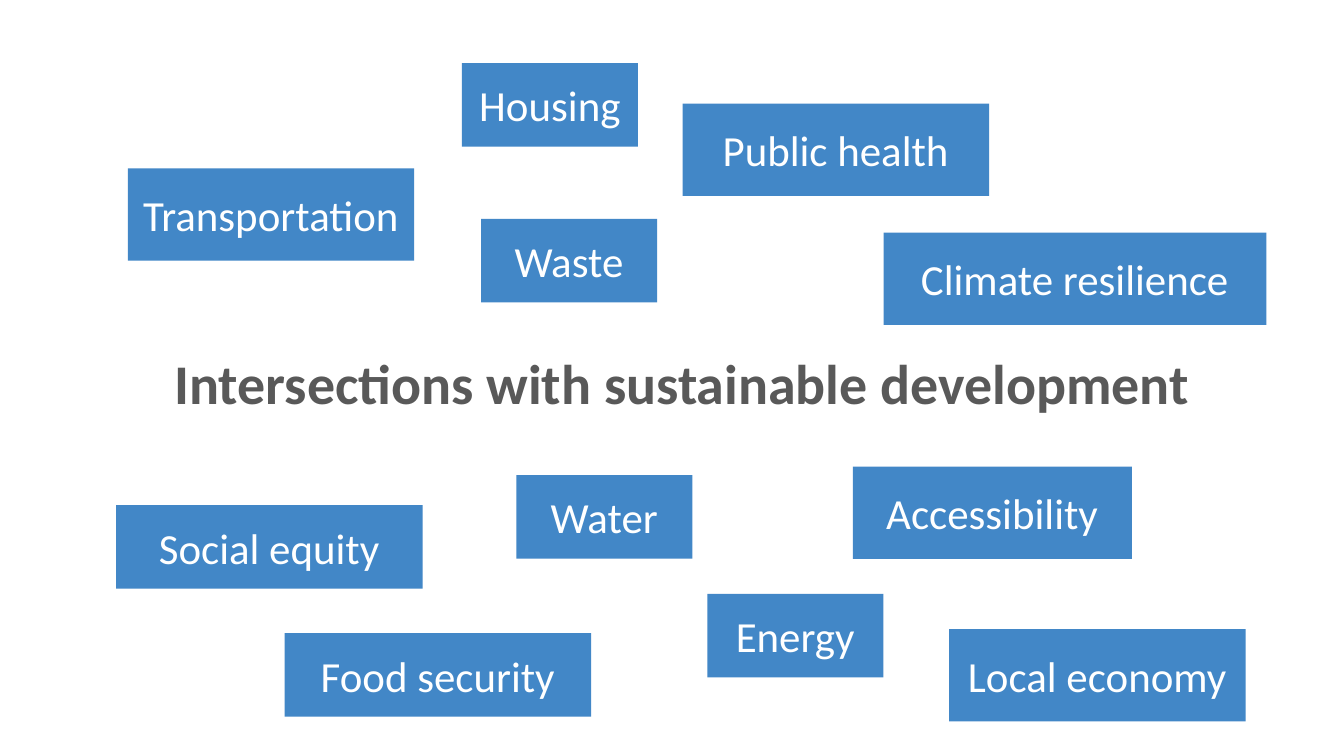
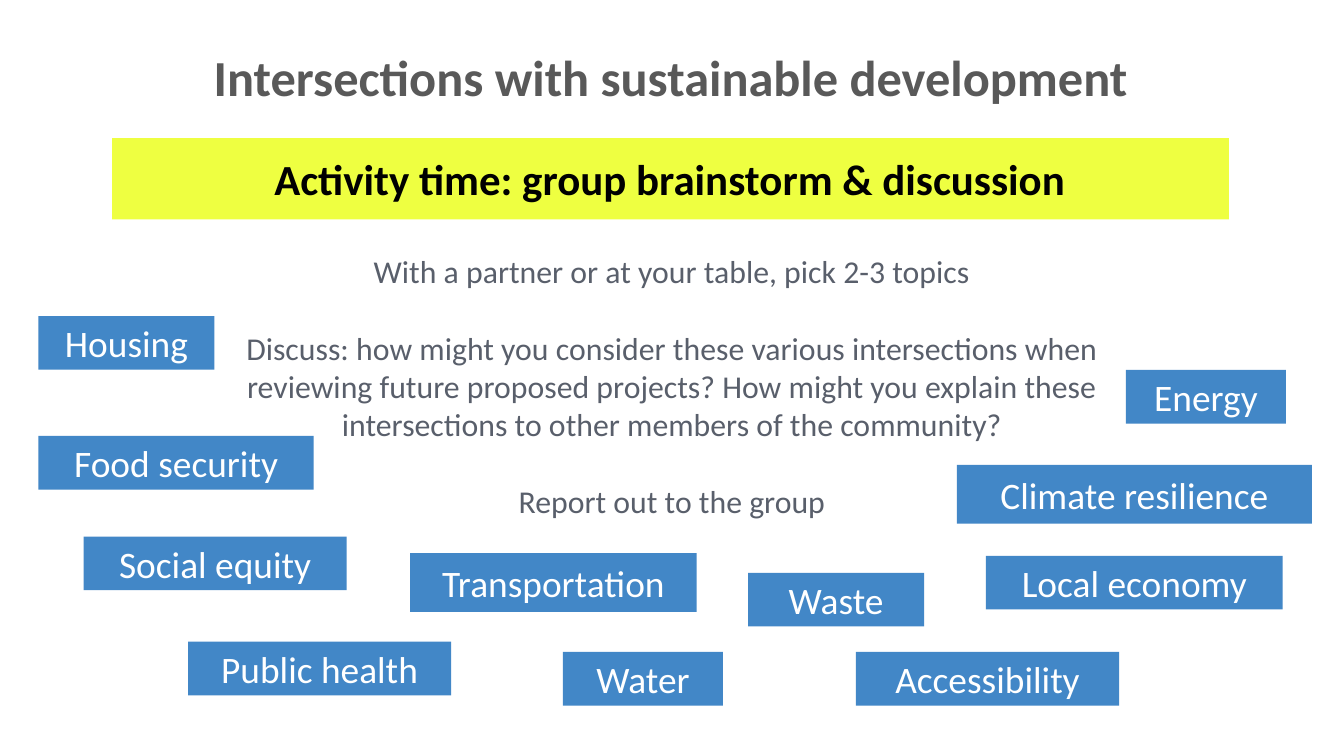
from typing import NamedTuple

from pptx import Presentation
from pptx.dml.color import RGBColor
from pptx.enum.shapes import MSO_SHAPE
from pptx.enum.text import MSO_ANCHOR, MSO_AUTO_SIZE, PP_ALIGN
from pptx.presentation import Presentation as Deck
from pptx.slide import Slide
from pptx.text.text import TextFrame
from pptx.util import Pt

FONT = "Calibri"
BLUE = RGBColor(0x42, 0x87, 0xC7)
YELLOW = RGBColor(0xEE, 0xFF, 0x41)
WHITE = RGBColor(0xFF, 0xFF, 0xFF)
BLACK = RGBColor(0x00, 0x00, 0x00)
TITLE_GREY = RGBColor(0x59, 0x59, 0x59)
BODY_GREY = RGBColor(0x59, 0x5F, 0x6B)
TITLE = "Intersections with sustainable development"
TITLE_ONLY = 5
INSET = 5.25
TITLE_INSET = 2.6
BODY_GAP = 20.75


class Area(NamedTuple):
    left: float
    top: float
    width: float
    height: float


class TextStyle(NamedTuple):
    size: float
    color: RGBColor
    bold: bool = False


class Topic(NamedTuple):
    label: str
    area: Area


NARROW, MEDIUM, WIDE = 94.3, 153.4, 164.2
LOW, TALL = 44.75, 49.5
OVERVIEW_TOPICS = [
    Topic("Housing", Area(247.5, 33.75, NARROW, LOW)),
    Topic("Transportation", Area(68.5, 90.25, MEDIUM, TALL)),
    Topic("Local economy", Area(508.4, 337, 159, TALL)),
    Topic("Social equity", Area(62.2, 270.6, WIDE, LOW)),
    Topic("Water", Area(276.6, 254.5, NARROW, LOW)),
    Topic("Energy", Area(378.9, 318.2, NARROW, LOW)),
    Topic("Waste", Area(257.7, 117.2, NARROW, LOW)),
    Topic("Climate resilience", Area(473.4, 124.6, 205, TALL)),
    Topic("Public health", Area(365.7, 55.5, WIDE, TALL)),
    Topic("Food security", Area(152.5, 339.2, WIDE, LOW)),
    Topic("Accessibility", Area(456.9, 250, 149.5, TALL)),
]

SMALL, LARGE = 85.7, 141
SLIM, THICK = 28.75, 31.5
ACTIVITY_TOPICS = [
    Topic("Housing", Area(20.6, 169.4, NARROW, SLIM)),
    Topic("Transportation", Area(219.8, 296.4, MEDIUM, THICK)),
    Topic("Local economy", Area(528.2, 297.8, 159, SLIM)),
    Topic("Social equity", Area(44.8, 287.5, LARGE, SLIM)),
    Topic("Water", Area(301.6, 349.3, SMALL, SLIM)),
    Topic("Energy", Area(603.2, 198.2, SMALL, SLIM)),
    Topic("Waste", Area(400.8, 306.9, NARROW, SLIM)),
    Topic("Climate resilience", Area(512.6, 249, 190.3, THICK)),
    Topic("Public health", Area(100.8, 343.8, LARGE, SLIM)),
    Topic("Food security", Area(20.6, 233.6, 147.5, SLIM)),
    Topic("Accessibility", Area(458.6, 349.3, LARGE, SLIM)),
]

INSTRUCTIONS = [
    "With a partner or at your table, pick 2-3 topics",
    "Discuss: how might you consider these various intersections when reviewing "
    "future proposed projects? How might you explain these intersections to other "
    "members of the community?",
    "Report out to the group",
]


def in_points(area: Area) -> list[Pt]:
    """Return the position and size of an area as lengths."""
    return [Pt(value) for value in area]


def format_text(
    text_frame: TextFrame,
    style: TextStyle,
    anchor: MSO_ANCHOR = MSO_ANCHOR.MIDDLE,
    vertical_inset: float = INSET,
) -> None:
    """Centre and style every paragraph of a text frame."""
    text_frame.word_wrap = True
    text_frame.vertical_anchor = anchor
    text_frame.margin_left = text_frame.margin_right = Pt(INSET)
    text_frame.margin_top = text_frame.margin_bottom = Pt(vertical_inset)
    for paragraph in text_frame.paragraphs:
        paragraph.alignment = PP_ALIGN.CENTER
        for run in paragraph.runs:
            run.font.name = FONT
            run.font.size = Pt(style.size)
            run.font.bold = style.bold
            run.font.color.rgb = style.color


def add_titled_slide(presentation: Deck, area: Area, size: float) -> Slide:
    """Add a title-only slide with the shared title in the given area."""
    slide = presentation.slides.add_slide(presentation.slide_layouts[TITLE_ONLY])
    title = slide.shapes.title
    title.left, title.top, title.width, title.height = in_points(area)
    title.text_frame.text = TITLE
    title.text_frame.auto_size = MSO_AUTO_SIZE.NONE
    format_text(
        title.text_frame, TextStyle(size, TITLE_GREY, True), vertical_inset=TITLE_INSET
    )
    title.text_frame.paragraphs[0].line_spacing = 0.9
    return slide


def add_box(
    slide: Slide, text: str, area: Area, fill: RGBColor, style: TextStyle
) -> None:
    """Add a filled rectangle with centred text."""
    shape = slide.shapes.add_shape(MSO_SHAPE.RECTANGLE, *in_points(area))
    shape.shadow.inherit = False
    shape.fill.solid()
    shape.fill.fore_color.rgb = fill
    shape.line.fill.background()
    shape.text_frame.text = text
    format_text(shape.text_frame, style)


def add_topics(slide: Slide, topics: list[Topic], size: float) -> None:
    """Add one blue box for each topic."""
    for topic in topics:
        add_box(slide, topic.label, topic.area, BLUE, TextStyle(size, WHITE))


def add_instructions(slide: Slide, area: Area) -> None:
    """Add the activity steps as spaced paragraphs."""
    text_frame = slide.shapes.add_textbox(*in_points(area)).text_frame
    text_frame.text = "\n".join(INSTRUCTIONS)
    text_frame.auto_size = MSO_AUTO_SIZE.SHAPE_TO_FIT_TEXT
    format_text(text_frame, TextStyle(17, BODY_GREY), MSO_ANCHOR.TOP)
    for paragraph in text_frame.paragraphs[1:]:
        paragraph.space_before = Pt(BODY_GAP)


def build_overview(presentation: Deck) -> None:
    """Build the slide with topics scattered around the title."""
    slide = add_titled_slide(presentation, Area(68.5, 174.25, 594, 65.5), 30)
    add_topics(slide, OVERVIEW_TOPICS, 23)


def build_activity(presentation: Deck) -> None:
    """Build the slide with the group activity and its topics."""
    slide = add_titled_slide(presentation, Area(100.8, 19.5, 517, 46.8), 27)
    add_box(
        slide,
        "Activity time: group brainstorm & discussion",
        Area(60, 74, 598.3, 43.5),
        YELLOW,
        TextStyle(23, BLACK, True),
    )
    add_instructions(slide, Area(107.3, 129.6, 505.4, 154.8))
    add_topics(slide, ACTIVITY_TOPICS, 20)


def main() -> None:
    """Build and save the presentation."""
    presentation = Presentation()
    presentation.slide_width = Pt(720)
    presentation.slide_height = Pt(405)
    build_overview(presentation)
    build_activity(presentation)
    presentation.save("out.pptx")


if __name__ == "__main__":
    main()
